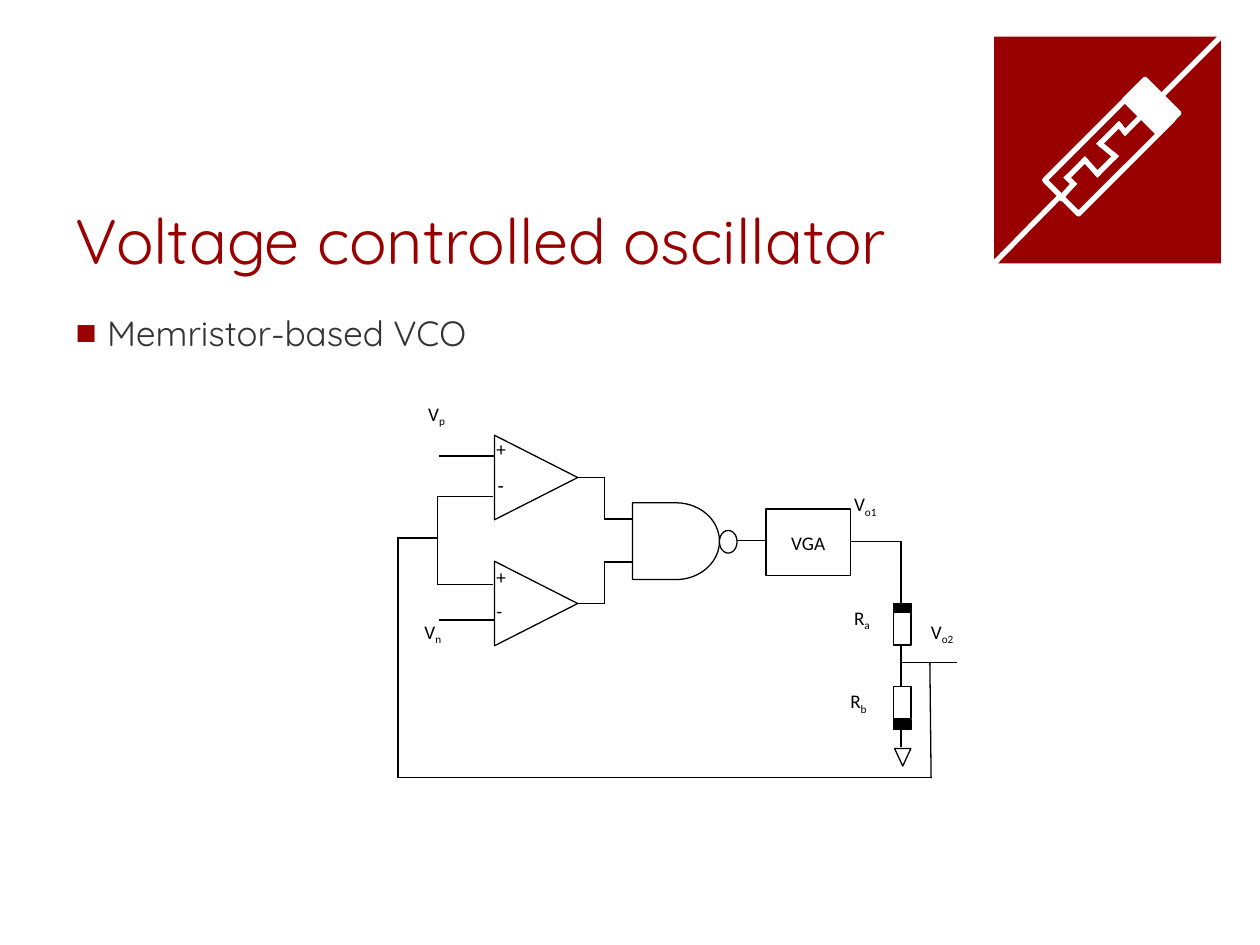
import lxml.etree
import pptx
import pptx.dml.color
import pptx.enum.shapes
import pptx.enum.text
import pptx.oxml.ns
import pptx.util

Inches = pptx.util.Inches
Pt = pptx.util.Pt
SHAPE = pptx.enum.shapes.MSO_SHAPE
COLORS = {"red": "990000", "text": "333333", "black": "000000", "white": "FFFFFF"}


def rgb(name):
    """Return the named palette colour."""
    return pptx.dml.color.RGBColor.from_string(COLORS[name])


def style_font(font, name, size, color):
    """Set family, size and colour of a font."""
    font.name, font.size = name, Pt(size)
    font.color.rgb = rgb(color)


def place(item, box):
    """Move an object to a box of left, top, width and height in inches."""
    item.left, item.top, item.width, item.height = map(Inches, box)


def add_part(slide, origin, kind, box, fill=None, line="black", width=0.75, rotation=0):
    """Add a preset shape at a box relative to the origin."""
    left, top, *size = box
    shape = slide.shapes.add_shape(
        kind, Inches(origin[0] + left), Inches(origin[1] + top), *map(Inches, size))
    shape.shadow.inherit = False
    shape.rotation = rotation
    if fill:
        shape.fill.solid()
        shape.fill.fore_color.rgb = rgb(fill)
    else:
        shape.fill.background()
    if line:
        shape.line.color.rgb = rgb(line)
        shape.line.width = Pt(width)
    else:
        shape.line.fill.background()
    return shape


def add_wire(slide, origin, points, color="black", width=0.75):
    """Join successive points, relative to the origin, with straight connectors."""
    absolute = [(Inches(origin[0] + x), Inches(origin[1] + y)) for x, y in points]
    for start, end in zip(absolute, absolute[1:]):
        connector = slide.shapes.add_connector(
            pptx.enum.shapes.MSO_CONNECTOR.STRAIGHT, *start, *end)
        connector.line.color.rgb = rgb(color)
        connector.line.width = Pt(width)
        connector.get_or_add_ln().set("cap", "sq")
        lxml.etree.SubElement(connector._element.spPr, pptx.oxml.ns.qn("a:effectLst"))


def add_label(slide, origin, position, text, subscript="", font="Calibri"):
    """Add a circuit label with an optional subscript."""
    left, top = origin[0] + position[0], origin[1] + position[1]
    width = 0.7 if subscript else 0.31
    box = slide.shapes.add_textbox(*map(Inches, (left, top, width, 0.5)))
    box.text_frame.word_wrap = True
    paragraph = box.text_frame.paragraphs[0]
    paragraph.space_after = Pt(10)
    style_font(paragraph.font, font, 11, "black")
    paragraph.add_run().text = text
    if subscript:
        run = paragraph.add_run()
        run.text = subscript
        run._r.get_or_add_rPr().set("baseline", "-25000")


def add_title(slide, box, text):
    """Fill the title placeholder."""
    title = slide.shapes.title
    place(title, box)
    frame = title.text_frame
    frame.text = text
    frame.auto_size = pptx.enum.text.MSO_AUTO_SIZE.NONE
    frame.vertical_anchor = pptx.enum.text.MSO_ANCHOR.BOTTOM
    paragraph = frame.paragraphs[0]
    paragraph.alignment = pptx.enum.text.PP_ALIGN.LEFT
    style_font(paragraph.font, "Quicksand", 36, "red")


def add_body(slide, box, text):
    """Fill the body placeholder with one square-bulleted item."""
    body = slide.placeholders[1]
    place(body, box)
    body.text_frame.text = text
    paragraph = body.text_frame.paragraphs[0]
    paragraph.space_before = Pt(18)
    style_font(paragraph.font, "Quicksand", 20, "text")
    properties = paragraph._p.get_or_add_pPr()
    properties.set("marL", str(Inches(0.25)))
    properties.set("indent", str(Inches(-0.25)))
    qn = pptx.oxml.ns.qn
    bullet_color = lxml.etree.Element(qn("a:buClr"))
    lxml.etree.SubElement(bullet_color, qn("a:srgbClr"), val=COLORS["red"])
    bullet = lxml.etree.Element(qn("a:buChar"), char="■")
    position = list(properties).index(properties.find(qn("a:defRPr")))
    properties.insert(position, bullet_color)
    properties.insert(position + 1, bullet)


def add_emblem(slide, origin):
    """Draw the memristor symbol on its red square."""
    white = {"line": "white", "width": 3, "rotation": 45}
    add_part(slide, origin, SHAPE.RECTANGLE, (0, 0, 1.8, 1.8), "red", None)
    add_part(slide, origin, SHAPE.RECTANGLE, (1.06, 0.44, 0.38, 0.23), "white", **white)
    add_part(slide, origin, SHAPE.RECTANGLE, (0.72, 0.37, 0.38, 1.06), **white)
    zigzag = [(1.19, 0.61), (1.04, 0.76), (0.99, 0.7), (0.84, 0.85), (0.96, 0.95),
              (0.82, 1.09), (0.72, 0.98), (0.58, 1.12), (0.63, 1.17), (0.53, 1.28)]
    leads = [[(1.33, 0.47), (1.81, -0.01)], [(-0.03, 1.83), (0.52, 1.27)]]
    for points in [zigzag, *leads]:
        add_wire(slide, origin, points, "white", 3)


def add_circuit(slide, origin):
    """Draw the oscillator: comparators, NAND gate, VGA and memristor divider."""
    for top in (0, 1):
        add_part(slide, origin, SHAPE.FLOWCHART_EXTRACT, (0.76, top, 0.67, 0.66),
                 "white", rotation=90)
    divider = [("black", 1.33, 0.08), ("white", 1.4, 0.26),
               ("black", 2.25, 0.08), ("white", 1.99, 0.25)]
    for fill, top, height in divider:
        add_part(slide, origin, SHAPE.RECTANGLE, (3.93, top, 0.14, height), fill)
    wires = [
        [(0.76, 0.16), (0.33, 0.16)],
        [(0.76, 1.46), (0.33, 1.46)],
        [(1.43, 0.33), (1.64, 0.33), (1.64, 0.66), (1.86, 0.66)],
        [(1.43, 1.33), (1.64, 1.33), (1.64, 1), (1.86, 1)],
        [(0.75, 0.48), (0.31, 0.48), (0.31, 1.18), (0.75, 1.18)],
        [(0.31, 0.81), (0, 0.81), (0, 2.71), (4.23, 2.71), (4.22, 1.8)],
        [(2.92, 0.83), (2.48, 0.83)],
        [(3.6, 0.84), (3.99, 0.84), (3.99, 1.35)],
        [(3.99, 1.66), (3.99, 1.99)],
        [(4.43, 1.8), (3.99, 1.8)],
        [(3.99, 2.32), (3.99, 2.46)],
    ]
    for points in wires:
        add_wire(slide, origin, points)
    add_part(slide, origin, SHAPE.FLOWCHART_MERGE, (3.94, 2.48, 0.13, 0.14), "white")
    add_part(slide, origin, SHAPE.FLOWCHART_DELAY, (1.86, 0.53, 0.69, 0.61), "white")
    add_part(slide, origin, SHAPE.OVAL, (2.55, 0.75, 0.14, 0.18), "white")
    amplifier = add_part(slide, origin, SHAPE.RECTANGLE, (2.92, 0.58, 0.67, 0.53))
    amplifier.text_frame.text = "VGA"
    amplifier.text_frame.vertical_anchor = pptx.enum.text.MSO_ANCHOR.MIDDLE
    paragraph = amplifier.text_frame.paragraphs[0]
    paragraph.alignment = pptx.enum.text.PP_ALIGN.CENTER
    style_font(paragraph.font, "Calibri", 11, "black")
    labels = [((3.52, 1.3), "R", "a"), ((3.49, 1.96), "R", "b"),
              ((4.13, 1.41), "V", "o2"), ((3.52, 0.4), "V", "o1"),
              ((0.14, -0.32), "V", "p"), ((0.11, 1.41), "V", "n"),
              ((0.68, -0.04), "+"), ((0.68, 0.98), "+"),
              ((0.69, 0.25), "-", "", "Arial"), ((0.68, 1.25), "-")]
    for label in labels:
        add_label(slide, origin, *label)


def main():
    """Build and save the slide."""
    presentation = pptx.Presentation()
    presentation.slide_width, presentation.slide_height = Inches(10), Inches(7.5)
    slide = presentation.slides.add_slide(presentation.slide_layouts[1])
    add_title(slide, (0.5, 1, 7.12, 1.25), "Voltage controlled oscillator")
    add_body(slide, (0.5, 2.42, 7.12, 4.28), "Memristor-based VCO")
    add_circuit(slide, (3.16, 3.46))
    add_emblem(slide, (7.89, 0.29))
    presentation.save("out.pptx")


if __name__ == "__main__":
    main()
